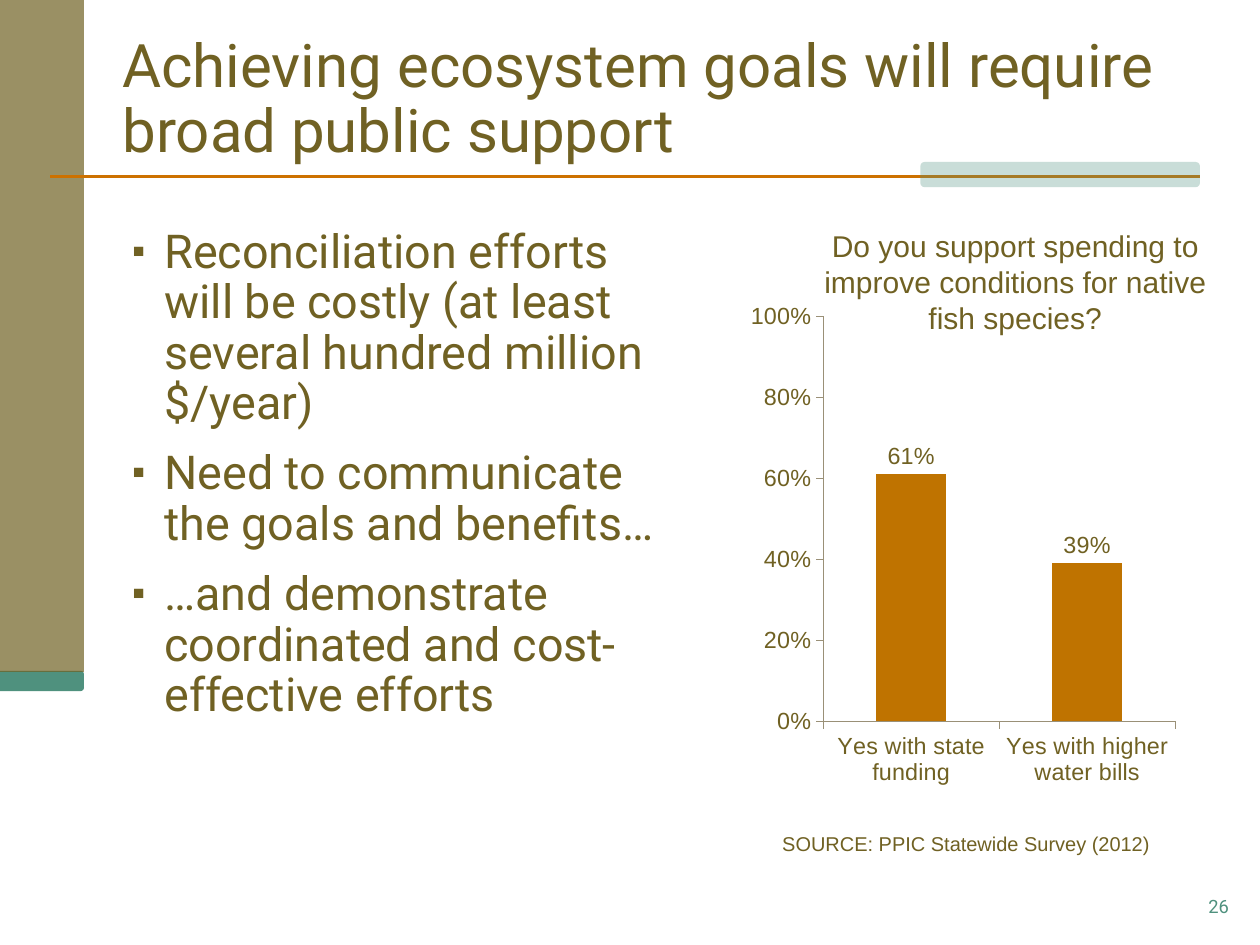
from lxml import etree
from pptx import Presentation
from pptx.chart.data import CategoryChartData
from pptx.dml.color import RGBColor
from pptx.enum.chart import XL_CHART_TYPE, XL_LABEL_POSITION, XL_TICK_MARK
from pptx.enum.shapes import MSO_CONNECTOR, MSO_SHAPE
from pptx.enum.text import MSO_ANCHOR, MSO_AUTO_SIZE, PP_ALIGN
from pptx.oxml import parse_xml
from pptx.oxml.ns import nsdecls, qn
from pptx.util import Inches, Pt

RECT, ROUNDED = MSO_SHAPE.RECTANGLE, MSO_SHAPE.ROUNDED_RECTANGLE
LEFT, CENTER, RIGHT = PP_ALIGN.LEFT, PP_ALIGN.CENTER, PP_ALIGN.RIGHT
TOP, BOTTOM = MSO_ANCHOR.TOP, MSO_ANCHOR.BOTTOM
OLIVE, TEAL, ORANGE, BAR_ORANGE, AXIS_GREY = "706123", "4F917E", "CD7100", "BF7300", "9A9077"


def rgb(hex_color):
    return RGBColor.from_string(hex_color)


def write_text(box, place, paragraphs, size, font, color=OLIVE, align=LEFT, anchor=TOP):
    box.left, box.top, box.width, box.height = map(Inches, place)
    frame = box.text_frame
    frame_format = {"word_wrap": True, "auto_size": MSO_AUTO_SIZE.NONE, "vertical_anchor": anchor}
    for key, value in frame_format.items():
        setattr(frame, key, value)
    frame.text = "\n".join(paragraphs)
    for paragraph in frame.paragraphs:
        paragraph.alignment = align
        text_font = paragraph.runs[0].font
        text_font.size, text_font.name = Pt(size), font
        text_font.color.rgb = rgb(color)
    return frame.paragraphs


prs = Presentation()
# 10 1/2 by 7 7/8 inches
prs.slide_width, prs.slide_height = Inches(21 / 2), Inches(63 / 8)
slide = prs.slides.add_slide(prs.slide_layouts[1])
shapes = slide.shapes

# Side band and accents, with opacity in percent
for kind, place, color, opacity in [
    (ROUNDED, (-0.08, 5.59, 0.78, 0.17), TEAL, 100),
    (RECT, (0, 0, 0.7, 5.6), OLIVE, 70),
    (ROUNDED, (7.67, 1.35, 2.33, 0.21), TEAL, 30),
]:
    accent = shapes.add_shape(kind, *map(Inches, place))
    accent.shadow.inherit = False
    accent.line.fill.background()
    accent.fill.solid()
    accent.fill.fore_color.rgb = rgb(color)
    if opacity < 100:
        fill_color = accent._element.spPr.find(".//" + qn("a:srgbClr"))
        etree.SubElement(fill_color, qn("a:alpha"), val=str(opacity * 1000))

# Title rule, over the side band and under the last accent
rule = shapes.add_connector(MSO_CONNECTOR.STRAIGHT, Inches(0.42), Inches(1.47), Inches(10), Inches(1.47))
rule.line.color.rgb = rgb(ORANGE)
rule.line.width = Pt(1.5)
etree.SubElement(rule._element.spPr, qn("a:effectLst"))
accent._element.addprevious(rule._element)

# Title
title_lines = write_text(
    shapes.title, (0.92, 0.23, 9.06, 1.2),
    ["Achieving ecosystem goals will require broad public support"], 36, "Roboto", anchor=BOTTOM)
title_lines[0].line_spacing = 0.9

# Bulleted arguments
arguments = write_text(
    slide.placeholders[1], (1, 1.85, 4.75, 5.17),
    ["Reconciliation efforts will be costly (at least several hundred million $/year)",
     "Need to communicate the goals and benefits…",
     "…and demonstrate coordinated and cost-effective efforts"], 28, "Roboto")
for index, argument in enumerate(arguments):
    argument.line_spacing = 0.9
    argument.space_before = Pt(12 if index else 0)
    properties = argument._p.get_or_add_pPr()
    properties.set("marL", str(Inches(0.27)))
    properties.set("indent", str(Inches(-0.27)))
    bullet_color = etree.SubElement(properties, qn("a:buClr"))
    etree.SubElement(bullet_color, qn("a:srgbClr"), val=OLIVE)
    etree.SubElement(properties, qn("a:buSzPct"), val="80000")
    etree.SubElement(properties, qn("a:buFont"), typeface="Arial")
    etree.SubElement(properties, qn("a:buChar"), char="▪")

# Survey chart
survey = CategoryChartData(number_format="0%")
survey.categories = ["Yes with state funding", "Yes with higher water bills"]
survey.add_series("Series 1", (0.61, 0.39))
chart = shapes.add_chart(
    XL_CHART_TYPE.COLUMN_CLUSTERED, *map(Inches, (5.67, 1.85, 4.67, 5.25)), survey).chart
chart.has_legend = chart.has_title = False
chart.font.size, chart.font.name = Pt(18), "Roboto"
chart.font.color.rgb = rgb(OLIVE)

support = chart.plots[0]
support.gap_width = 150
support.vary_by_categories = False
bars = support.series[0].format.fill
bars.solid()
bars.fore_color.rgb = rgb(BAR_ORANGE)
labels = support.series[0].data_labels
label_format = {"show_value": True, "number_format": "0%", "number_format_is_linked": False,
                "position": XL_LABEL_POSITION.OUTSIDE_END}
for key, value in label_format.items():
    setattr(labels, key, value)

percent_axis, answer_axis = chart.value_axis, chart.category_axis
percent_format = {"minimum_scale": 0, "maximum_scale": 1, "major_unit": 0.2}
for key, value in percent_format.items():
    setattr(percent_axis, key, value)
percent_axis.tick_labels.number_format = "0%"
percent_axis.tick_labels.number_format_is_linked = False
for axis in (percent_axis, answer_axis):
    axis.has_major_gridlines = False
    axis.major_tick_mark = XL_TICK_MARK.OUTSIDE
    axis.format.line.color.rgb = rgb(AXIS_GREY)
for chart_font in (labels.font, percent_axis.tick_labels.font, answer_axis.tick_labels.font):
    chart_font.size, chart_font.name = Pt(14), "Arial"
    chart_font.color.rgb = rgb(OLIVE)

# Fixed inner plot area, as fractions of the chart
plot_area = chart._chartSpace.chart.plotArea
for old_layout in plot_area.findall(qn("c:layout")):
    plot_area.remove(old_layout)
plot_area.insert(0, parse_xml(
    f'<c:layout {nsdecls("c")}><c:manualLayout><c:layoutTarget val="inner"/>'
    '<c:xMode val="edge"/><c:yMode val="edge"/><c:x val="0.255"/><c:y val="0.15"/>'
    '<c:w val="0.628"/><c:h val="0.643"/></c:manualLayout></c:layout>'))

# Chart question, source and page number
for place, words, size, font, color, align in [
    ((6.75, 1.85, 3.42, 1.01),
     "Do you support spending to improve conditions for native fish species?",
     18, "Arial", OLIVE, CENTER),
    ((6.42, 6.88, 3.58, 0.3), "SOURCE: PPIC Statewide Survey (2012)", 12, "Arial", OLIVE, LEFT),
    ((8.15, 7.41, 2.19, 0.52), "26", 11, "Roboto", TEAL, RIGHT),
]:
    caption = shapes.add_textbox(0, 0, 0, 0)
    write_text(caption, place, [words], size, font, color, align)

prs.save("out.pptx")
